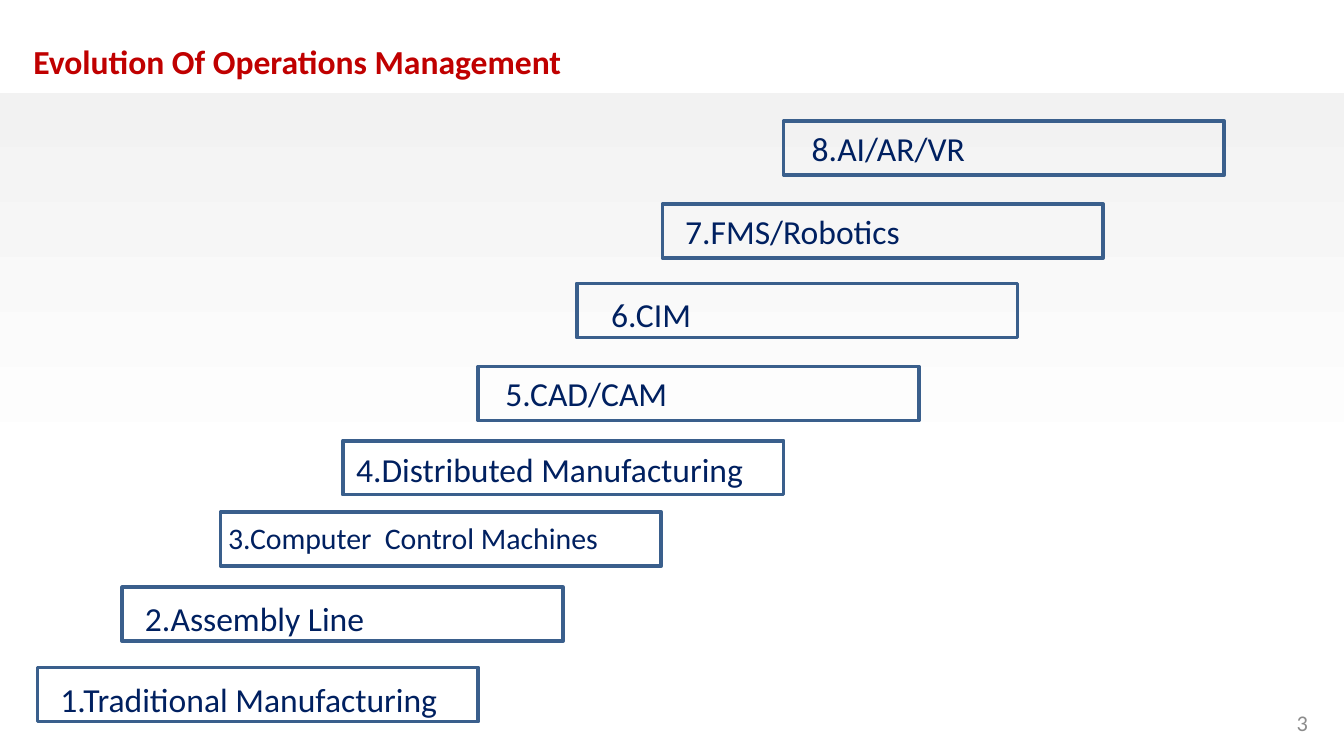
from dataclasses import dataclass

from pptx import Presentation
from pptx import util as u
from pptx.dml.color import RGBColor
from pptx.enum import shapes, text


@dataclass(frozen=True)
class Theme:
    font: str = "Calibri"
    title: str = "C00000"
    label: str = "002060"
    outline: str = "3A5F8C"
    page: str = "8C8C8C"
    shade_top: str = "F2F2F2"
    shade_end: str = "FFFFFF"
    body_size: int = 18
    small_size: int = 16
    page_size: int = 12
    outline_width: int = 2


THEME = Theme()
STEP_WIDTH, STEP_HEIGHT = 8.33, 1.02

# Label, box left and top, label left, top and width (cm), type size
STEPS = [
    ("1.Traditional Manufacturing", (0.71, 12.62), (0.89, 12.7, 8.13), THEME.body_size),
    ("2.Assembly Line", (2.31, 11.1), (2.49, 11.18, 7.49), THEME.body_size),
    ("3.Computer  Control Machines", (4.17, 9.68), (4.06, 9.7, 9.93), THEME.small_size),
    ("4.Distributed Manufacturing", (6.48, 8.33), (6.48, 8.36, 8.84), THEME.body_size),
    ("5.CAD/CAM", (9.04, 6.93), (9.3, 6.93, 4.32), THEME.body_size),
    ("6.CIM", (10.9, 5.36), (11.3, 5.44, 2.57), THEME.body_size),
    ("7.FMS/Robotics", (12.52, 3.86), (12.7, 3.86, 5.59), THEME.body_size),
    ("8.AI/AR/VR", (14.81, 2.29), (15.09, 2.29, 7.04), THEME.body_size),
]


def add_rectangle(slide, left, top, width, height):
    rectangle = slide.shapes.add_shape(
        shapes.MSO_SHAPE.RECTANGLE,
        u.Cm(left), u.Cm(top), u.Cm(width), u.Cm(height))
    rectangle.shadow.inherit = False
    return rectangle


def add_backdrop(slide):
    backdrop = add_rectangle(slide, -0.03, 1.75, 25.43, 12.54)
    backdrop.line.fill.background()
    backdrop.fill.gradient()
    backdrop.fill.gradient_angle = 270
    shades = [(0, THEME.shade_top), (0.58, THEME.shade_end)]
    for stop, (position, color) in zip(backdrop.fill.gradient_stops, shades):
        stop.position = position
        stop.color.rgb = RGBColor.from_string(color)


def add_step_box(slide, left, top):
    step = add_rectangle(slide, left, top, STEP_WIDTH, STEP_HEIGHT)
    step.fill.background()
    step.line.color.rgb = RGBColor.from_string(THEME.outline)
    step.line.width = u.Pt(THEME.outline_width)


def add_text(slide, wording, left, top, width, height, size, color,
             bold=False, align=text.PP_ALIGN.LEFT, anchor=text.MSO_ANCHOR.TOP):
    frame = slide.shapes.add_textbox(
        u.Cm(left), u.Cm(top), u.Cm(width), u.Cm(height)).text_frame
    frame.word_wrap = True
    frame.vertical_anchor = anchor
    paragraph = frame.paragraphs[0]
    paragraph.text = wording
    paragraph.alignment = align
    paragraph.font.name = THEME.font
    paragraph.font.size = u.Pt(size)
    paragraph.font.bold = bold
    paragraph.font.color.rgb = RGBColor.from_string(color)


def main():
    deck = Presentation()
    deck.slide_width, deck.slide_height = u.Cm(25.4), u.Cm(14.29)
    slide = deck.slides.add_slide(deck.slide_layouts[6])

    # Backdrop, page number and title
    add_backdrop(slide)
    add_text(slide, "3", 19.05, 13.28, 5.92, 0.76, THEME.page_size, THEME.page,
             align=text.PP_ALIGN.RIGHT, anchor=text.MSO_ANCHOR.MIDDLE)
    add_text(slide, "Evolution Of Operations Management", 0.38, 0.64, 15.9, 1.02,
             THEME.body_size, THEME.title, bold=True)

    # Staircase of stages, rising from left to right
    for wording, box_corner, (left, top, width), size in STEPS:
        add_step_box(slide, *box_corner)
        add_text(slide, wording, left, top, width, STEP_HEIGHT, size, THEME.label)

    deck.save("out.pptx")


if __name__ == "__main__":
    main()
